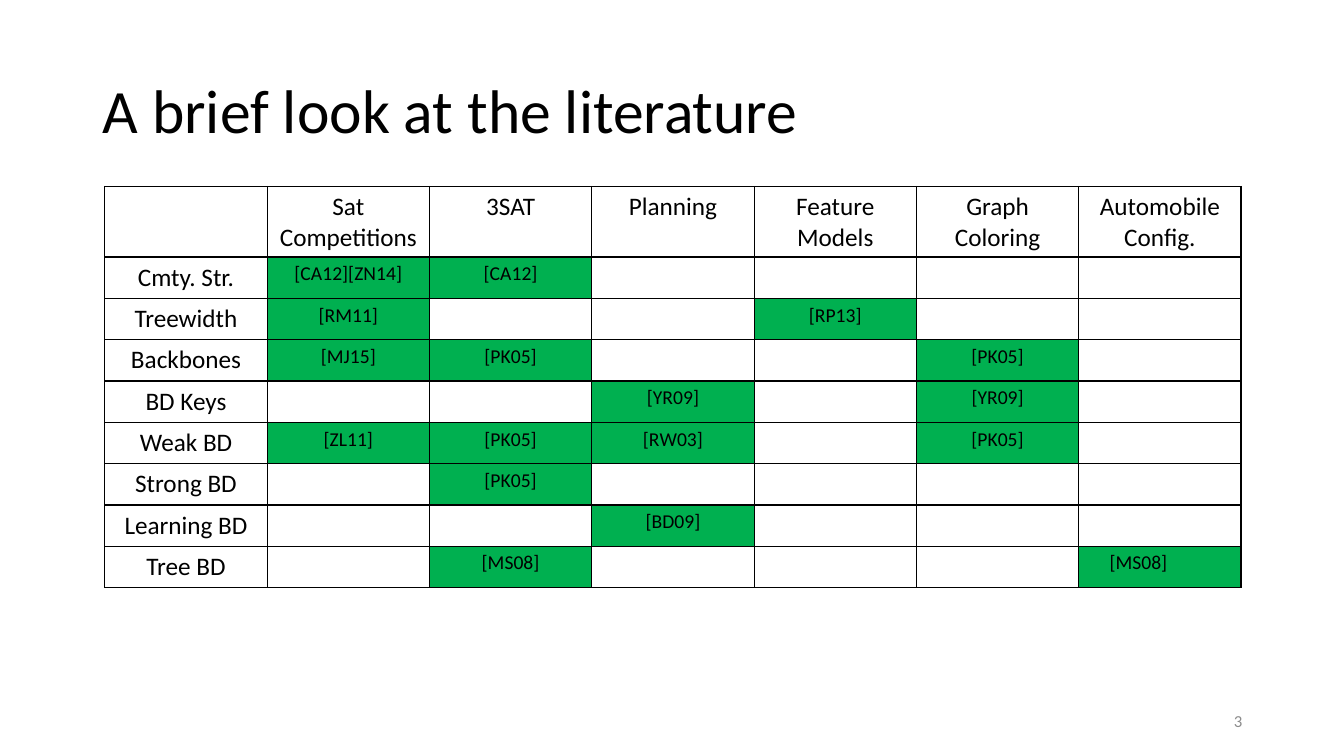
from dataclasses import dataclass, field

from lxml import etree
from pptx import Presentation
from pptx.dml.color import RGBColor
from pptx.enum import text
from pptx.oxml import ns
from pptx.util import Inches, Pt

FONT = "Calibri"
BLACK, WHITE, GREEN, GRAY = "000000", "FFFFFF", "00B050", "8C8C8C"
LEFT, TOP, COL_WIDTH = 1.04, 1.85, 1.61
HEADER_HEIGHT, ROW_HEIGHT = 0.7, 0.41


@dataclass
class Label:
    text: str
    left: float
    top: float
    width: float
    height: float
    size: int
    color: str
    align: text.PP_ALIGN
    spacing: float = 1.0


@dataclass
class Measure:
    name: str
    papers: dict[str, str] = field(default_factory=dict)


LABELS = [
    Label("A brief look at the literature", 0.92, 0.4, 11.5, 1.45, 44, BLACK,
          text.PP_ALIGN.LEFT, 0.9),
    Label("3", 9.42, 6.95, 3, 0.4, 12, GRAY, text.PP_ALIGN.RIGHT),
]

SAT, THREE_SAT, PLANNING = "Sat Competitions", "3SAT", "Planning"
FEATURES, COLORING, AUTOMOBILE = "Feature Models", "Graph Coloring", "Automobile\nConfig."
DOMAINS = [SAT, THREE_SAT, PLANNING, FEATURES, COLORING, AUTOMOBILE]

MEASURES = [
    Measure("Cmty. Str.", {SAT: "[CA12][ZN14]", THREE_SAT: "[CA12]"}),
    Measure("Treewidth", {SAT: "[RM11]", FEATURES: "[RP13]"}),
    Measure("Backbones", {SAT: "[MJ15]", THREE_SAT: "[PK05]", COLORING: "[PK05]"}),
    Measure("BD Keys", {PLANNING: "[YR09]", COLORING: "[YR09]"}),
    Measure("Weak BD", {SAT: "[ZL11]", THREE_SAT: "[PK05]", PLANNING: "[RW03]",
                        COLORING: "[PK05]"}),
    Measure("Strong BD", {THREE_SAT: "[PK05]"}),
    Measure("Learning BD", {PLANNING: "[BD09]"}),
    Measure("Tree BD", {THREE_SAT: "[MS08]", AUTOMOBILE: "[MS08]\t"}),
]


def rgb(color: str) -> RGBColor:
    return RGBColor.from_string(color)


def style(p, size: int, color: str, align: text.PP_ALIGN) -> None:
    p.alignment = align
    p.font.name = FONT
    p.font.size = Pt(size)
    p.font.color.rgb = rgb(color)


def add_label(s, label: Label) -> None:
    sp = s.shapes.add_textbox(Inches(label.left), Inches(label.top),
                              Inches(label.width), Inches(label.height))
    tf = sp.text_frame
    tf.word_wrap = True
    tf.vertical_anchor = text.MSO_ANCHOR.MIDDLE
    p = tf.paragraphs[0]
    p.text = label.text
    p.line_spacing = label.spacing
    style(p, label.size, label.color, label.align)


def add_borders(cell) -> None:
    tc_pr = cell._tc.get_or_add_tcPr()
    for side in ("L", "R", "T", "B"):
        ln = etree.SubElement(tc_pr, ns.qn(f"a:ln{side}"), w=str(Pt(1)))
        fill = etree.SubElement(ln, ns.qn("a:solidFill"))
        etree.SubElement(fill, ns.qn("a:srgbClr"), val=BLACK)


def fill_cell(cell, content: str, size: int, color: str) -> None:
    add_borders(cell)
    cell.fill.solid()
    cell.fill.fore_color.rgb = rgb(color)
    cell.text = content
    for p in cell.text_frame.paragraphs:
        style(p, size, BLACK, text.PP_ALIGN.CENTER)


def add_literature_table(s) -> None:
    rows, cols = len(MEASURES) + 1, len(DOMAINS) + 1
    height = HEADER_HEIGHT + ROW_HEIGHT * len(MEASURES)
    table = s.shapes.add_table(rows, cols, Inches(LEFT), Inches(TOP),
                               Inches(COL_WIDTH * cols), Inches(height)).table
    table.first_row = table.horz_banding = False
    for i, row in enumerate(table.rows):
        row.height = Inches(ROW_HEIGHT if i else HEADER_HEIGHT)
    for c, heading in enumerate(["", *DOMAINS]):
        fill_cell(table.cell(0, c), heading, 18, WHITE)
    for r, measure in enumerate(MEASURES, 1):
        fill_cell(table.cell(r, 0), measure.name, 18, WHITE)
        for c, domain in enumerate(DOMAINS, 1):
            paper = measure.papers.get(domain, "")
            fill_cell(table.cell(r, c), paper, 14, GREEN if paper else WHITE)


def main() -> None:
    prs = Presentation()
    prs.slide_width, prs.slide_height = Inches(13.33), Inches(7.5)
    s = prs.slides.add_slide(prs.slide_layouts[6])
    for label in LABELS:
        add_label(s, label)
    add_literature_table(s)
    prs.save("out.pptx")


if __name__ == "__main__":
    main()
